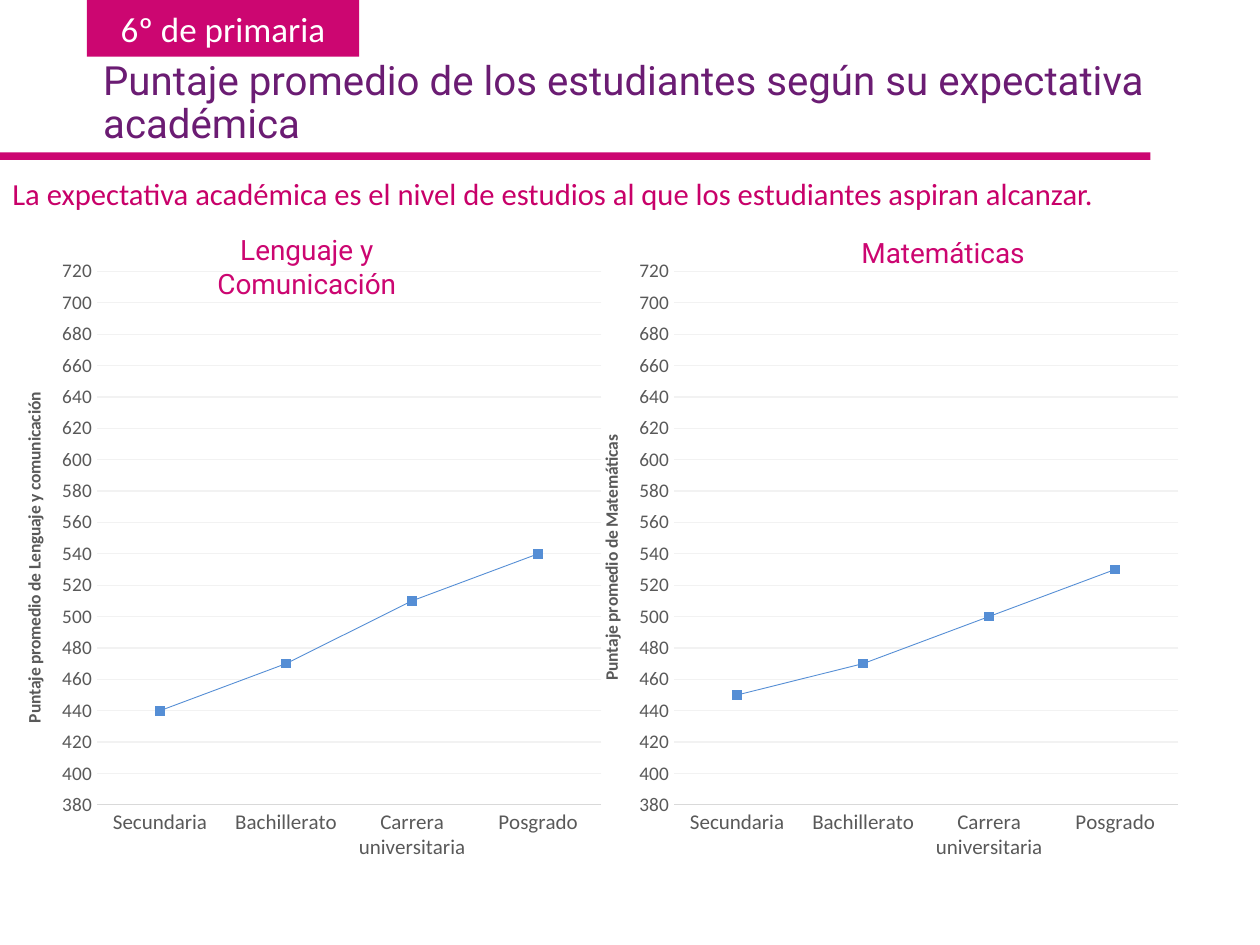
import pptx
import pptx.util
import pptx.chart.data
import pptx.dml.color
import pptx.enum.chart
import pptx.enum.shapes
import pptx.enum.text
import pptx.oxml
import pptx.oxml.ns

Pt = pptx.util.Pt
Align = pptx.enum.text.PP_ALIGN
Anchor = pptx.enum.text.MSO_ANCHOR
Mark = pptx.enum.chart.XL_MARKER_STYLE
Tick = pptx.enum.chart.XL_TICK_MARK

COLS, ROWS = 1000, 750
INK = {
    "pink": "CC0671", "rose": "C80069", "plum": "6B1C73", "white": "FFFFFF",
    "gray": "595959", "axis": "D9D9D9", "grid": "F2F2F2", "blue": "558ED5",
    "black": "000000",
}
LEVELS = ["Secundaria", "Bachillerato", "Carrera universitaria", "Posgrado"]
PANELS = [
    ("Lenguaje y Comunicación", (108, 180), -1,
     "Puntaje promedio de Lenguaje y comunicación", (440, 470, 510, 540)),
    ("Matemáticas", (613, 182), 457,
     "Puntaje promedio de Matemáticas", (450, 470, 500, 530)),
]
PLOT = {"x": 0.16, "y": 0.02, "w": 0.82, "h": 0.87}


def tint(name):
    """Return the named colour."""
    return pptx.dml.color.RGBColor.from_string(INK[name])


def place(deck, left, top, wide, high):
    """Turn grid columns and rows into slide lengths."""
    col, row = deck.slide_width / COLS, deck.slide_height / ROWS
    return [round(n) for n in (left * col, top * row, wide * col, high * row)]


def style(font, size, ink, face="Calibri", bold=False):
    """Set size, colour, face and weight of a font."""
    font.size, font.name, font.bold = Pt(size), face, bold
    font.color.rgb = tint(ink)


def write(frame, text, size, ink, face="Calibri", align=Align.LEFT):
    """Write one run in the first paragraph and return the paragraph."""
    frame.word_wrap = True
    para = frame.paragraphs[0]
    para.alignment = align
    run = para.add_run()
    run.text = text
    style(run.font, size, ink, face)
    return para


def add_bar(slide, spot):
    """Add a plain pink rectangle."""
    bar = slide.shapes.add_shape(pptx.enum.shapes.MSO_SHAPE.RECTANGLE, *spot)
    bar.shadow.inherit = False
    bar.fill.solid()
    bar.fill.fore_color.rgb = tint("pink")
    bar.line.fill.background()
    return bar


def add_text(slide, spot, *words):
    """Add a text box and return its paragraph."""
    return write(slide.shapes.add_textbox(*spot).text_frame, *words)


def rule(line, ink):
    """Draw a thin chart line."""
    line.color.rgb = tint(ink)
    line.width = Pt(0.75)


def fit(chart):
    """Fix the plot area and clear the chart background."""
    space = chart._chartSpace
    ns = pptx.oxml.ns.nsdecls("c", "a")
    tag = pptx.oxml.ns.qn
    area = space.find(".//" + tag("c:plotArea"))
    for old in area.findall(tag("c:layout")):
        area.remove(old)
    sizes = "".join(f'<c:{k} val="{v}"/>' for k, v in PLOT.items())
    area.insert(0, pptx.oxml.parse_xml(
        f'<c:layout {ns}><c:manualLayout><c:layoutTarget val="inner"/>'
        f'<c:xMode val="edge"/><c:yMode val="edge"/>{sizes}'
        '</c:manualLayout></c:layout>'))
    space.find(tag("c:chart")).addnext(pptx.oxml.parse_xml(
        f'<c:spPr {ns}><a:noFill/><a:ln><a:noFill/></a:ln></c:spPr>'))


def set_axes(chart, title):
    """Style both axes and title the value axis."""
    cat, val = chart.category_axis, chart.value_axis
    for axis, size in ((cat, 12), (val, 11)):
        axis.major_tick_mark = axis.minor_tick_mark = Tick.NONE
        style(axis.tick_labels.font, size, "gray")
    rule(cat.format.line, "axis")
    val.format.line.fill.background()
    val.minimum_scale, val.maximum_scale, val.major_unit = 380, 730, 20
    val.has_major_gridlines = True
    rule(val.major_gridlines.format.line, "grid")
    run = val.axis_title.text_frame.paragraphs[0].add_run()
    run.text = title
    style(run.font, 10, "gray", bold=True)


def add_line(slide, spot, title, scores):
    """Add a line chart of scores by expected level."""
    data = pptx.chart.data.CategoryChartData()
    data.categories = LEVELS
    data.add_series("Series 1", scores)
    kind = pptx.enum.chart.XL_CHART_TYPE.LINE_MARKERS
    chart = slide.shapes.add_chart(kind, *spot, data).chart
    chart.has_title = chart.has_legend = False
    style(chart.font, 10, "black")
    chart.plots[0].vary_by_categories = False
    set_axes(chart, title)
    line = chart.plots[0].series[0]
    line.smooth = False
    line.format.line.color.rgb = tint("blue")
    line.format.line.width = Pt(0.5)
    mark = line.marker
    mark.style, mark.size = Mark.SQUARE, 5
    mark.format.fill.solid()
    mark.format.fill.fore_color.rgb = tint("blue")
    mark.format.line.color.rgb = tint("blue")
    fit(chart)


def main():
    """Build and save the slide."""
    deck = pptx.Presentation()
    deck.slide_width, deck.slide_height = pptx.util.Inches(10), pptx.util.Inches(7.5)
    slide = deck.slides.add_slide(deck.slide_layouts[6])
    tab = add_bar(slide, place(deck, 69, 0, 216, 45)).text_frame
    tab.vertical_anchor = Anchor.MIDDLE
    write(tab, "6º de primaria", 20, "white", "Calibri", Align.CENTER)
    head = add_text(
        slide, place(deck, 72, 43, 862, 92),
        "Puntaje promedio de los estudiantes según su expectativa académica",
        23, "plum", "Roboto")
    head.line_spacing = 0.9
    add_bar(slide, place(deck, 0, 121, 913, 6))
    for name, spot, *_ in PANELS:
        label = add_text(slide, place(deck, *spot, 271, 43),
                         name, 16, "pink", "Roboto", Align.CENTER)
        label.space_before = Pt(10)
    add_text(
        slide, place(deck, 0, 134, 1000, 40),
        "La expectativa académica es el nivel de estudios al que los "
        "estudiantes aspiran alcanzar.", 17.5, "rose")
    for _, _, left, title, scores in PANELS:
        add_line(slide, place(deck, left, 193, 488, 501), title, scores)
    deck.save("out.pptx")


if __name__ == "__main__":
    main()
